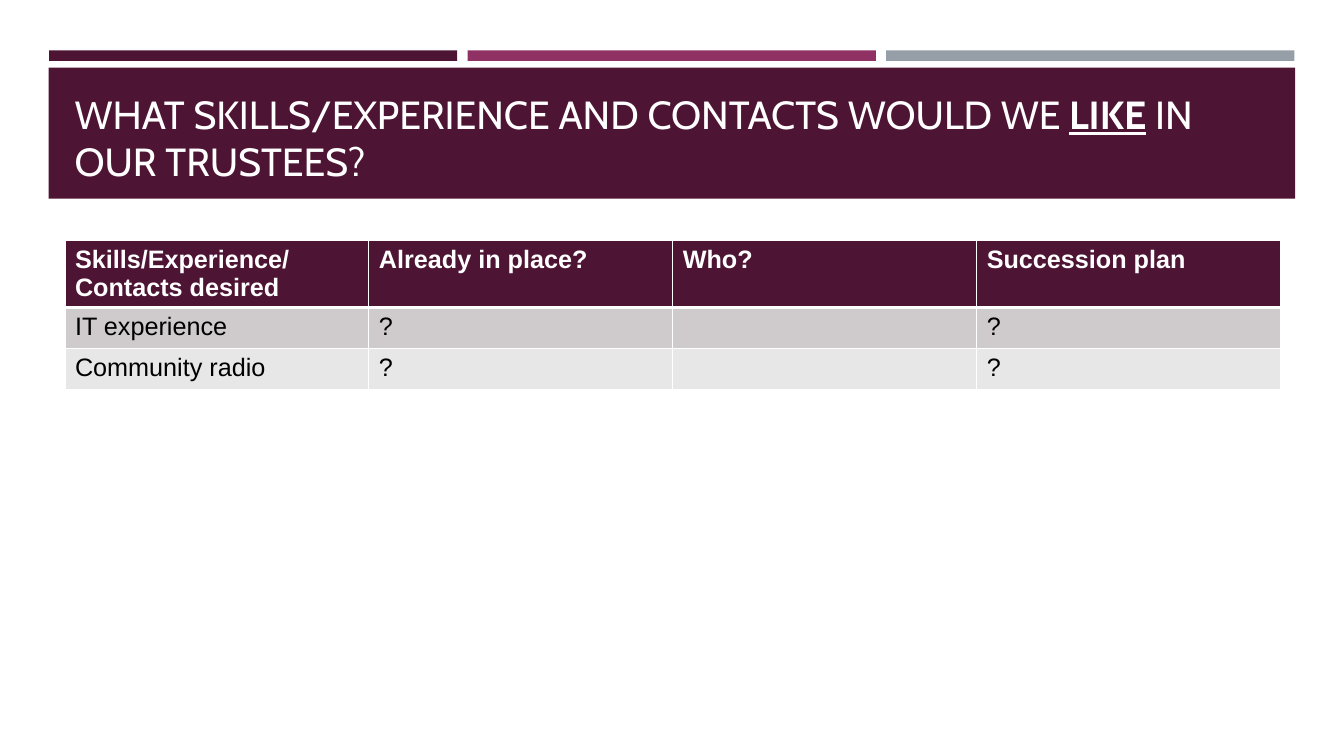
from dataclasses import dataclass

import lxml.etree
import pptx
import pptx.dml.color
import pptx.enum.shapes
import pptx.enum.text
import pptx.oxml.ns
import pptx.util

Pt = pptx.util.Pt
COLORS = {
    "plum": "4D1434",
    "magenta": "903163",
    "gray": "969FA7",
    "white": "FFFFFF",
    "black": "000000",
    "row_dark": "CFCACC",
    "row_light": "E8E7E7",
}


@dataclass
class Bar:
    left: float
    top: float
    width: float
    height: float
    color: str


@dataclass
class RowStyle:
    height: float
    fill: str
    color: str
    bold: bool
    top_border: float
    bottom_border: float


BAR_LEFT, BAR_STEP, BAR_WIDTH = 35, 299, 291.6
BARS = [
    Bar(BAR_LEFT + i * BAR_STEP, 36, BAR_WIDTH, 7.5, color)
    for i, color in enumerate(("plum", "magenta", "gray"))
] + [Bar(34.8, 48.4, 890.3, 93.6, "plum")]

ROWS = [
    ("Skills/Experience/ Contacts desired", "Already in place?", "Who?", "Succession plan"),
    ("IT experience", "?", "", "?"),
    ("Community radio", "?", "", "?"),
]
ROW_STYLES = [
    RowStyle(47.2, "plum", "white", True, 1, 3),
    RowStyle(29.2, "row_dark", "black", False, 3, 1),
    RowStyle(29.2, "row_light", "black", False, 1, 1),
]


def rgb(name: str) -> pptx.dml.color.RGBColor:
    return pptx.dml.color.RGBColor.from_string(COLORS[name])


def add_text(p, text: str, *, font: str, size: float, color: str,
             bold: bool = False, underline: bool = False) -> None:
    r = p.add_run()
    r.text = text
    r.font.name = font
    r.font.size = Pt(size)
    r.font.color.rgb = rgb(color)
    r.font.bold = bold
    r.font.underline = underline


def add_bar(s, bar: Bar) -> None:
    sp = s.shapes.add_shape(
        pptx.enum.shapes.MSO_SHAPE.RECTANGLE,
        Pt(bar.left), Pt(bar.top), Pt(bar.width), Pt(bar.height))
    sp.shadow.inherit = False
    sp.fill.solid()
    sp.fill.fore_color.rgb = rgb(bar.color)
    sp.line.fill.background()


def set_title(s) -> None:
    """Fill the title placeholder and bring it in front of its band."""
    sp = s.shapes.title
    sp.element.getparent().append(sp.element)
    sp.left, sp.top, sp.width, sp.height = Pt(46.1), Pt(55.4), Pt(868.3), Pt(79.9)
    tf = sp.text_frame
    tf.word_wrap = True
    tf.auto_size = pptx.enum.text.MSO_AUTO_SIZE.NONE
    tf.vertical_anchor = pptx.enum.text.MSO_ANCHOR.BOTTOM
    p = tf.paragraphs[0]
    p.alignment = pptx.enum.text.PP_ALIGN.LEFT
    title_format = {"font": "Cabin", "size": 28, "color": "white"}
    add_text(p, "WHAT SKILLS/EXPERIENCE AND CONTACTS WOULD WE ", **title_format)
    add_text(p, "LIKE", bold=True, underline=True, **title_format)
    add_text(p, " IN OUR TRUSTEES?", **title_format)


def set_borders(cell, top: float, bottom: float) -> None:
    """Draw white cell borders; must run before the cell is filled."""
    qn = pptx.oxml.ns.qn
    tc_pr = cell._tc.get_or_add_tcPr()
    for side, width in (("L", 1), ("R", 1), ("T", top), ("B", bottom)):
        ln = lxml.etree.SubElement(tc_pr, qn(f"a:ln{side}"), w=str(Pt(width)))
        fill = lxml.etree.SubElement(ln, qn("a:solidFill"))
        lxml.etree.SubElement(fill, qn("a:srgbClr"), val=COLORS["white"])


def add_skills_table(s) -> None:
    height = sum(style.height for style in ROW_STYLES)
    table = s.shapes.add_table(
        len(ROWS), len(ROWS[0]), Pt(46.4), Pt(172), Pt(868.4), Pt(height)).table
    for column in table.columns:
        column.width = Pt(217.1)
    for i, (texts, style) in enumerate(zip(ROWS, ROW_STYLES)):
        table.rows[i].height = Pt(style.height)
        for j, text in enumerate(texts):
            cell = table.cell(i, j)
            set_borders(cell, style.top_border, style.bottom_border)
            cell.fill.solid()
            cell.fill.fore_color.rgb = rgb(style.fill)
            if text:
                add_text(cell.text_frame.paragraphs[0], text, font="Arial",
                         size=18, color=style.color, bold=style.bold)


def main() -> None:
    prs = pptx.Presentation()
    prs.slide_width, prs.slide_height = Pt(960), Pt(540)
    s = prs.slides.add_slide(prs.slide_layouts.get_by_name("Title Only"))
    for bar in BARS:
        add_bar(s, bar)
    set_title(s)
    add_skills_table(s)
    prs.save("out.pptx")


if __name__ == "__main__":
    main()
